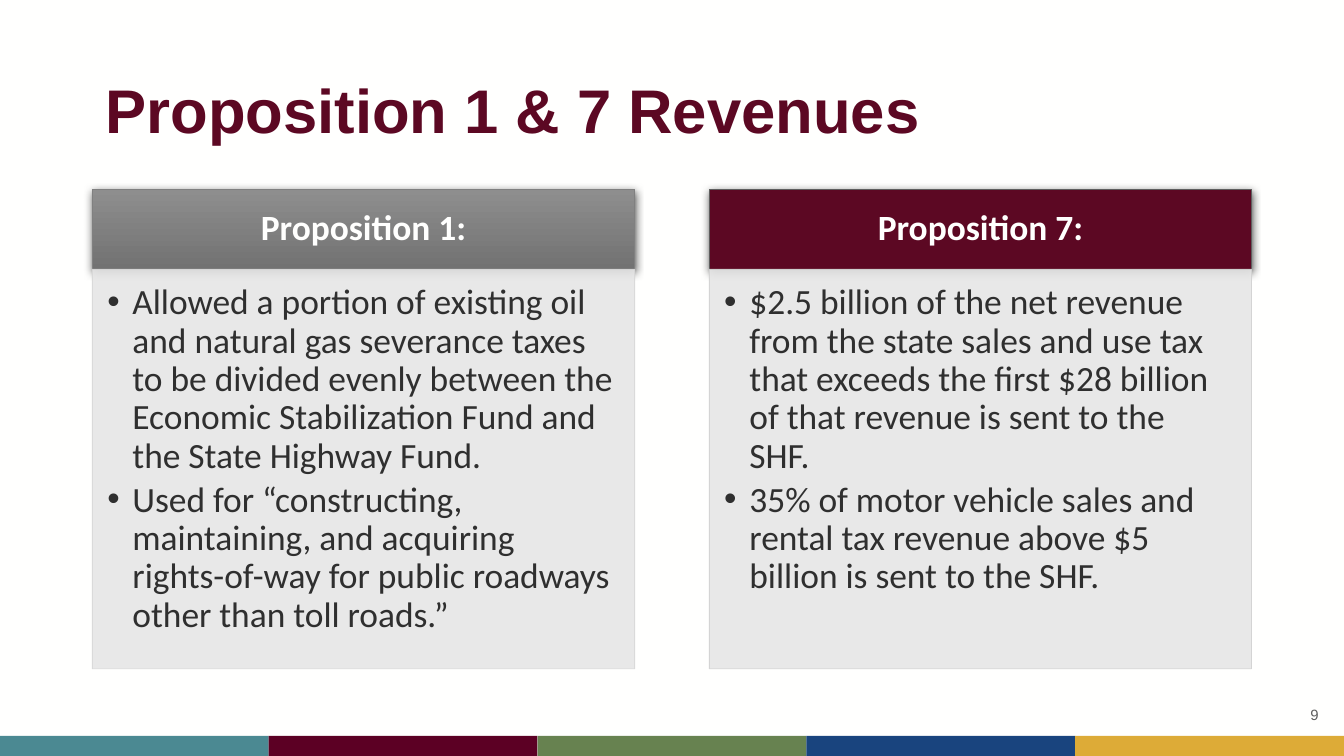
"""Build the Proposition 1 & 7 Revenues slide with two headed columns."""
from lxml import etree
from pptx import Presentation
from pptx.dml.color import RGBColor
from pptx.enum.shapes import MSO_SHAPE
from pptx.enum.text import MSO_ANCHOR, PP_ALIGN
from pptx.oxml.ns import qn
from pptx.util import Pt

RECTANGLE = MSO_SHAPE.RECTANGLE
TOP, MIDDLE = MSO_ANCHOR.TOP, MSO_ANCHOR.MIDDLE
LEFT, CENTER, RIGHT = PP_ALIGN.LEFT, PP_ALIGN.CENTER, PP_ALIGN.RIGHT

WIDTH, HEIGHT = 720, 405
TITLE = "Proposition 1 & 7 Revenues"
PAGE_NUMBER = "9"
STRIPES = ["4B8992", "5C0024", "678250", "19447E", "DDAB37"]
COLUMNS = [
    {
        "heading": "Proposition 1:",
        "fill": ("8E8E8E", "727272"),
        "lines": ("808080", "D8D8D8"),
        "points": [
            "Allowed a portion of existing oil and natural gas severance taxes to be divided "
            "evenly between the Economic Stabilization Fund and the State Highway Fund.",
            "Used for “constructing, maintaining, and acquiring rights-of-way for public "
            "roadways other than toll roads.”",
        ],
    },
    {
        "heading": "Proposition 7:",
        "fill": ("5C0823",),
        "lines": ("5E5E5E", "D2D2D2"),
        "points": [
            "$2.5 billion of the net revenue from the state sales and use tax that exceeds "
            "the first $28 billion of that revenue is sent to the SHF.",
            "35% of motor vehicle sales and rental tax revenue above $5 billion is sent to the SHF.",
        ],
    },
]
MARGIN, COLUMN_WIDTH = 49.5, 290.5
HEADING_TOP, HEADING_HEIGHT, BODY_HEIGHT = 101.3, 43, 214
STRIPE_HEIGHT = 10.8


def color(value):
    return RGBColor.from_string(value)


def add_rectangle(page, left, top, width, height, fill, line=None):
    box = page.shapes.add_shape(RECTANGLE, Pt(left), Pt(top), Pt(width), Pt(height))
    box.shadow.inherit = False
    if len(fill) == 2:
        box.fill.gradient()
        box.fill.gradient_angle = 270
        for stop, value in zip(box.fill.gradient_stops, fill):
            stop.color.rgb = color(value)
    else:
        box.fill.solid()
        box.fill.fore_color.rgb = color(fill[0])
    if line:
        box.line.color.rgb = color(line)
        box.line.width = Pt(0.5)
    else:
        box.line.fill.background()
    return box


def add_text_box(page, left, top, width, height):
    return page.shapes.add_textbox(Pt(left), Pt(top), Pt(width), Pt(height))


def add_alpha(element, percent):
    etree.SubElement(element, qn("a:alpha"), val=str(percent * 1000))


def add_shadow(box):
    effects = box._element.spPr.find(qn("a:effectLst"))
    shadow = etree.SubElement(
        effects, qn("a:outerShdw"), blurRad=str(Pt(4.5)), dist=str(Pt(1.5)),
        dir="5400000", algn="ctr", rotWithShape="0")
    add_alpha(etree.SubElement(shadow, qn("a:srgbClr"), val="000000"), 63)


def add_bullet(para, indent):
    properties = para._p.get_or_add_pPr()
    properties.set("marL", str(Pt(indent)))
    properties.set("indent", str(-Pt(indent)))
    etree.SubElement(properties, qn("a:buFont"), typeface="Arial")
    etree.SubElement(properties, qn("a:buChar"), char="•")


def write(box, texts, size, ink, font="Calibri", bold=False, align=LEFT, anchor=MIDDLE,
          insets=(7.2, 3.6, 7.2, 3.6), spacing=0.9, after=0, indent=None):
    frame = box.text_frame
    frame.word_wrap = True
    frame.vertical_anchor = anchor
    frame.margin_left, frame.margin_top, frame.margin_right, frame.margin_bottom = map(Pt, insets)
    for index, text in enumerate(texts):
        para = frame.add_paragraph() if index else frame.paragraphs[0]
        if indent:
            add_bullet(para, indent)
        para.alignment = align
        para.line_spacing = spacing
        para.space_after = Pt(after)
        span = para.add_run()
        span.text = text
        span.font.name, span.font.size, span.font.bold = font, Pt(size), bold
        span.font.color.rgb = color(ink)


def add_column(page, left, column):
    heading_line, body_line = column["lines"]
    heading = add_rectangle(page, left, HEADING_TOP, COLUMN_WIDTH, HEADING_HEIGHT,
                            column["fill"], heading_line)
    add_shadow(heading)
    write(heading, [column["heading"]], 19, "FFFFFE", bold=True, align=CENTER,
          insets=(10.8, 5.8, 10.8, 5.8))
    body = add_rectangle(page, left, HEADING_TOP + HEADING_HEIGHT, COLUMN_WIDTH, BODY_HEIGHT,
                         ("E6E6E6",), body_line)
    for tint in body._element.spPr.iter(qn("a:srgbClr")):
        add_alpha(tint, 90)
    write(body, column["points"], 19, "2F2F2F", anchor=TOP, insets=(8, 8, 10.8, 12),
          after=3, indent=13.5)


def main():
    deck = Presentation()
    deck.slide_width, deck.slide_height = Pt(WIDTH), Pt(HEIGHT)
    page = deck.slides.add_slide(deck.slide_layouts[6])
    page.background.fill.solid()
    page.background.fill.fore_color.rgb = color("FFFFFE")

    stripe_width = WIDTH / len(STRIPES)
    for index, fill in enumerate(STRIPES):
        add_rectangle(page, index * stripe_width, HEIGHT - STRIPE_HEIGHT,
                      stripe_width, STRIPE_HEIGHT, (fill,))

    title = add_text_box(page, MARGIN, 21.6, WIDTH - 2 * MARGIN, 78.3)
    write(title, [TITLE], 33, "5C0823", font="Arial", bold=True)

    step = WIDTH - 2 * MARGIN - COLUMN_WIDTH
    for index, column in enumerate(COLUMNS):
        add_column(page, MARGIN + index * step, column)

    number = add_text_box(page, 551.5, 371.9, 162, 21.6)
    write(number, [PAGE_NUMBER], 8, "5E5E5E", font="Arial", align=RIGHT, spacing=1.0)
    deck.save("out.pptx")


if __name__ == "__main__":
    main()
